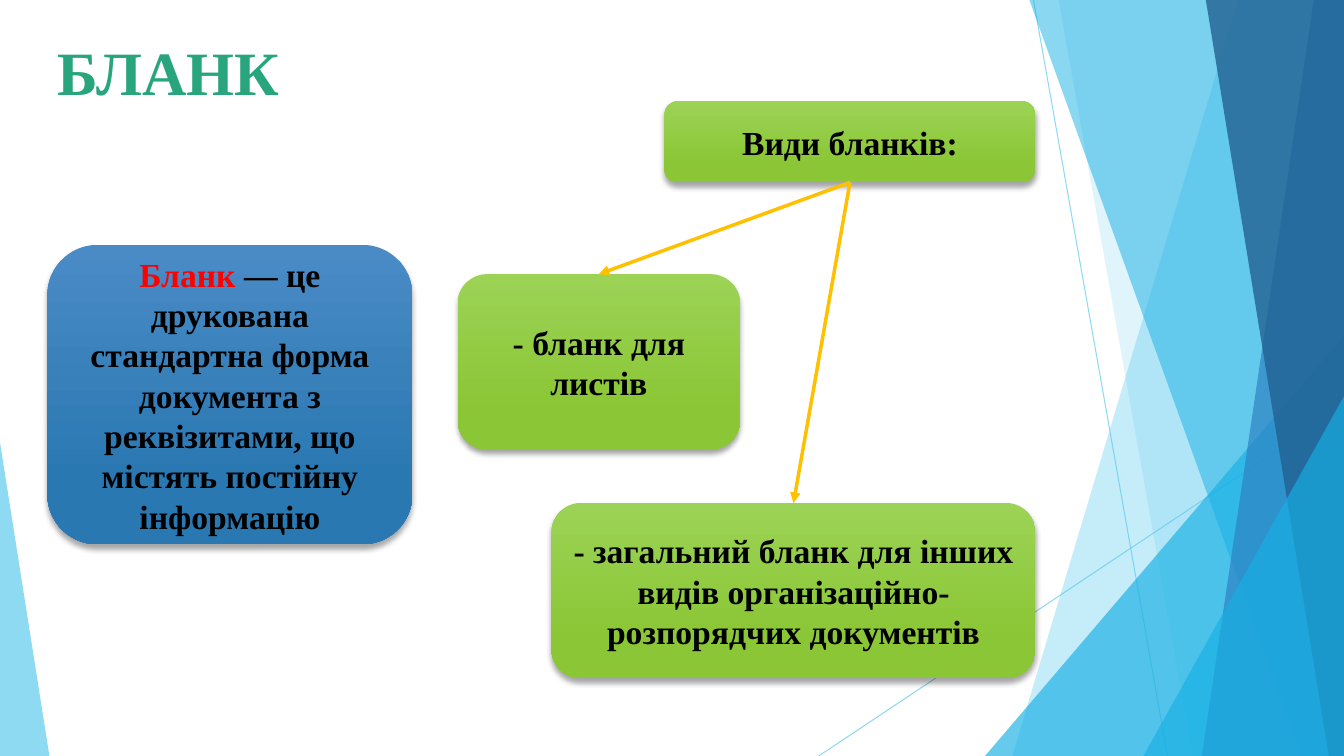
import dataclasses

import pptx
import pptx.dml.color
import pptx.enum.shapes
import pptx.enum.text
import pptx.oxml
import pptx.oxml.ns
import pptx.util
from pptx.util import Inches

SHAPE = pptx.enum.shapes.MSO_SHAPE
ALIGN = pptx.enum.text.PP_ALIGN
ANCHOR = pptx.enum.text.MSO_ANCHOR
NS = pptx.oxml.ns.nsdecls("a")
WIDTH, HEIGHT = 13.33, 7.5


@dataclasses.dataclass(frozen=True)
class Theme:
    font: str = "Times New Roman"
    title_size: int = 44
    body_size: int = 24
    title: str = "29A57D"
    text: str = "000000"
    term: str = "FF0000"
    arrow: str = "FFC000"
    sky: str = "5FCBEF"
    cyan: str = "17B0E4"
    blue: str = "2E83C3"
    navy: str = "226292"
    blue_box: tuple = ("4A8BC6", "2A78B2")
    green_box: tuple = ("9CD356", "8AC635")


def rgb(value):
    return pptx.dml.color.RGBColor.from_string(value)


def set_alpha(color_format_parent, percent):
    """Make the solid colour inside the given XML element see-through."""
    color = color_format_parent.find(".//" + pptx.oxml.ns.qn("a:srgbClr"))
    color.append(pptx.oxml.parse_xml(f'<a:alpha {NS} val="{percent * 1000}"/>'))


def write_text(frame, runs, *, font, size, align=ALIGN.LEFT, anchor=ANCHOR.TOP, space_before=0):
    """Fill the frame with one bold paragraph of (text, colour) runs."""
    frame.word_wrap = True
    frame.vertical_anchor = anchor
    paragraph = frame.paragraphs[0]
    paragraph.alignment = align
    paragraph.space_before = pptx.util.Pt(space_before)
    for text, color in runs:
        run = paragraph.add_run()
        run.text = text
        run.font.name = font
        run.font.size = pptx.util.Pt(size)
        run.font.bold = True
        run.font.color.rgb = rgb(color)


class SlideBuilder:
    def __init__(self, slide, theme):
        self.shapes = slide.shapes
        self.theme = theme

    def paint(self, shape, color, alpha):
        shape.shadow.inherit = False
        shape.line.fill.background()
        shape.fill.solid()
        shape.fill.fore_color.rgb = rgb(color)
        set_alpha(shape.fill._xPr, alpha)

    def wedge(self, top_x, bottom_x, color, alpha):
        """Fill from a slanted left edge to the slide's right side."""
        builder = self.shapes.build_freeform(Inches(top_x), 0)
        corners = [(WIDTH, 0), (WIDTH, HEIGHT), (bottom_x, HEIGHT)]
        builder.add_line_segments([(Inches(x), Inches(y)) for x, y in corners])
        self.paint(builder.convert_to_shape(), color, alpha)

    def triangle(self, left, top, width, apex, color, alpha):
        """Stand a triangle on the slide's bottom edge; apex is 0 (left) to 1 (right)."""
        shape = self.shapes.add_shape(SHAPE.ISOSCELES_TRIANGLE, Inches(left), Inches(top),
                                      Inches(width), Inches(HEIGHT - top))
        shape.adjustments[0] = apex
        self.paint(shape, color, alpha)

    def line(self, start, end, color, width):
        connector = self.shapes.add_connector(
            pptx.enum.shapes.MSO_CONNECTOR.STRAIGHT, *map(Inches, start + end))
        connector.line.color.rgb = rgb(color)
        connector.line.width = pptx.util.Pt(width)
        connector._element.spPr.append(pptx.oxml.parse_xml(f"<a:effectLst {NS}/>"))
        return connector

    def hairline(self, start, end):
        connector = self.line(start, end, self.theme.sky, 0.75)
        set_alpha(connector.line._ln, 70)

    def arrow(self, parent, child):
        """Point from the parent's bottom to the child's top."""
        connector = self.line((0, 0), (1, 1), self.theme.arrow, 2.5)
        connector.begin_connect(parent, 2)
        connector.end_connect(child, 0)
        connector.line._ln.append(pptx.oxml.parse_xml(f'<a:tailEnd {NS} type="triangle"/>'))

    def title(self, text, left, top, width, height):
        box = self.shapes.add_textbox(*map(Inches, (left, top, width, height)))
        write_text(box.text_frame, [(text, self.theme.title)],
                   font=self.theme.font, size=self.theme.title_size)

    def card(self, runs, left, top, width, height, colors, space_before=0):
        shape = self.shapes.add_shape(SHAPE.ROUNDED_RECTANGLE,
                                      *map(Inches, (left, top, width, height)))
        shape.line.fill.background()
        shape.fill.gradient()
        shape.fill.gradient_angle = 270
        for stop, color, position in zip(shape.fill.gradient_stops, colors, (0, 0.78)):
            stop.color.rgb = rgb(color)
            stop.position = position
        shape.shadow.inherit = False
        effects = shape._element.spPr.find(pptx.oxml.ns.qn("a:effectLst"))
        effects.append(pptx.oxml.parse_xml(
            f'<a:outerShdw {NS} blurRad="{pptx.util.Pt(4)}" dist="{pptx.util.Pt(3)}" '
            'dir="5400000" rotWithShape="0"><a:srgbClr val="000000"/></a:outerShdw>'))
        set_alpha(effects, 35)
        write_text(shape.text_frame, runs, font=self.theme.font, size=self.theme.body_size,
                   align=ALIGN.CENTER, anchor=ANCHOR.MIDDLE, space_before=space_before)
        return shape

    def backdrop(self):
        theme = self.theme
        self.hairline((10.25, 0), (11.58, HEIGHT))
        self.hairline((WIDTH, 4.03), (8.12, HEIGHT))
        self.wedge(12.28, 10.04, theme.sky, 36)
        self.wedge(10.5, 11.83, theme.sky, 20)
        self.triangle(9.77, 3.33, 3.56, 1, theme.cyan, 66)
        self.wedge(10.21, 12.91, theme.cyan, 50)
        self.wedge(13.03, 11.92, theme.blue, 70)
        self.wedge(11.96, 13.18, theme.navy, 80)
        self.triangle(11.34, 3.93, 1.99, 1, theme.cyan, 66)
        self.triangle(0, 4.39, 0.49, 0, theme.sky, 70)


def main():
    presentation = pptx.Presentation()
    presentation.slide_width = Inches(WIDTH)
    presentation.slide_height = Inches(HEIGHT)
    theme = Theme()
    builder = SlideBuilder(presentation.slides.add_slide(presentation.slide_layouts[6]), theme)

    builder.backdrop()
    builder.title("БЛАНК", 0.47, 0.29, 4.4, 1.41)
    definition = (" — це друкована стандартна форма документа з реквізитами, "
                  "що містять постійну інформацію")
    builder.card([("Бланк", theme.term), (definition, theme.text)],
                 0.47, 2.43, 3.62, 2.97, theme.blue_box, space_before=10)

    letter_form, form_kinds, general_form = [
        builder.card([(text, theme.text)], *place, theme.green_box)
        for text, place in (
            ("- бланк для листів", (4.54, 2.72, 2.8, 1.74)),
            ("Види бланків:", (6.59, 1, 3.68, 0.81)),
            ("- загальний бланк для інших видів організаційно-розпорядчих документів",
             (5.47, 4.99, 4.8, 1.74)),
        )
    ]
    for form in (letter_form, general_form):
        builder.arrow(form_kinds, form)

    presentation.save("out.pptx")


if __name__ == "__main__":
    main()
